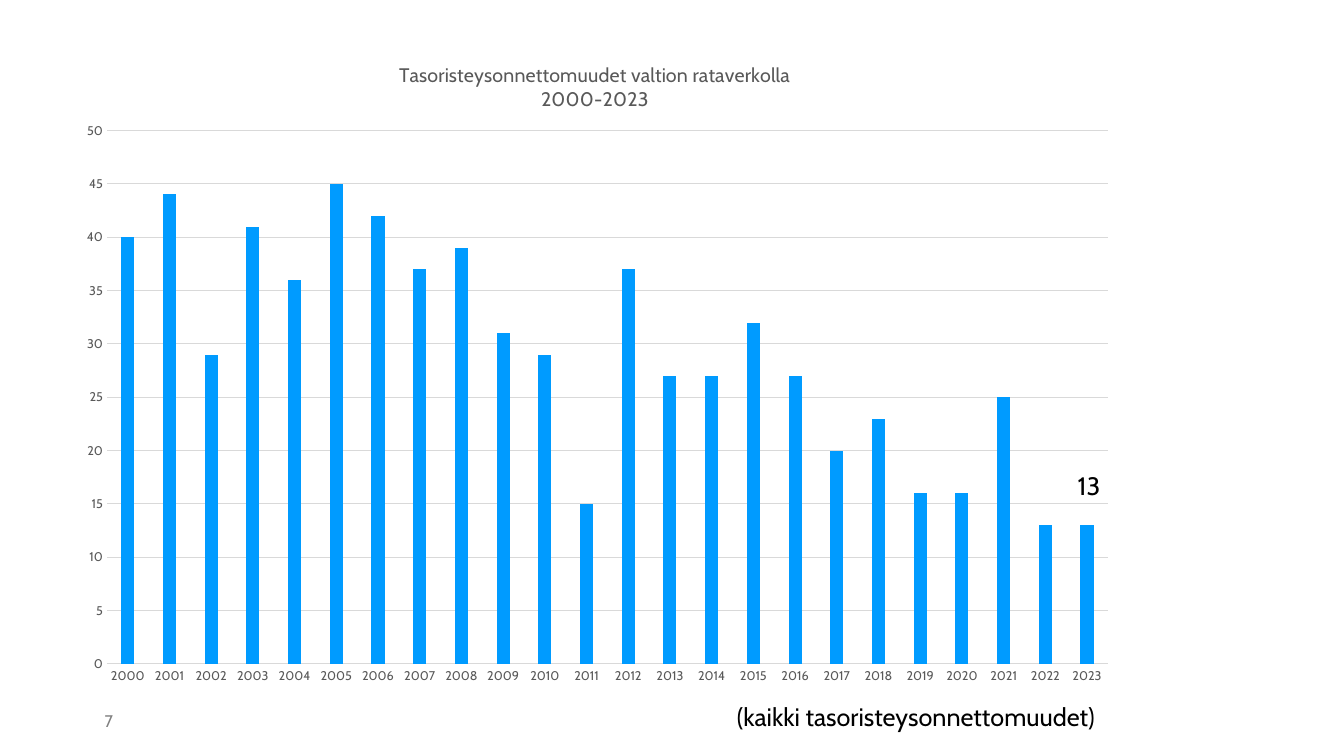
from dataclasses import dataclass

from lxml import etree
from pptx import Presentation
from pptx import util as u
from pptx.chart import data as chart_data
from pptx.dml.color import RGBColor
from pptx.enum import chart as chart_enum
from pptx.enum import text as text_enum
from pptx.oxml import ns


@dataclass(frozen=True)
class Theme:
    font: str = "Cabin"
    bar: str = "009BFF"
    grid: str = "D9D9D9"
    chart_text: str = "595959"
    page_number: str = "808080"
    ink: str = "000000"
    title_size: float = 14
    axis_size: float = 9
    page_size: float = 12
    note_size: float = 18
    line_width: float = 0.75


@dataclass(frozen=True)
class Label:
    text: str
    left: float
    top: float
    width: float
    height: float
    size: float
    color: str
    wrap: bool = False
    anchor: text_enum.MSO_ANCHOR = text_enum.MSO_ANCHOR.TOP


THEME = Theme()
FIRST_YEAR = 2000
ACCIDENTS = (40, 44, 29, 41, 36, 45, 42, 37, 39, 31, 29, 15,
             37, 27, 27, 32, 27, 20, 23, 16, 16, 25, 13, 13)
TITLE_LINES = ("Tasoristeysonnettomuudet valtion rataverkolla", "2000-2023")
PAGE_NUMBER = Label("7", 0.94, 6.95, 0.61, 0.4, THEME.page_size, THEME.page_number,
                    wrap=True, anchor=text_enum.MSO_ANCHOR.MIDDLE)
NOTES = (
    Label("(kaikki tasoristeysonnettomuudet)", 7.21, 6.91, 3.99, 0.4,
          THEME.note_size, THEME.ink),
    Label("13", 10.59, 4.62, 0.48, 0.4, THEME.note_size, THEME.ink),
)


def set_font(font, *, size: float, color: str) -> None:
    font.name = THEME.font
    font.size = u.Pt(size)
    font.bold = False
    font.color.rgb = RGBColor.from_string(color)


def write_text(paragraph, content: str, *, size: float, color: str) -> None:
    run = paragraph.add_run()
    run.text = content
    set_font(run.font, size=size, color=color)


def add_label(slide, label: Label) -> None:
    box = slide.shapes.add_textbox(u.Inches(label.left), u.Inches(label.top),
                                   u.Inches(label.width), u.Inches(label.height))
    frame = box.text_frame
    frame.word_wrap = label.wrap
    frame.vertical_anchor = label.anchor
    if not label.wrap:
        frame.auto_size = text_enum.MSO_AUTO_SIZE.SHAPE_TO_FIT_TEXT
    write_text(frame.paragraphs[0], label.text, size=label.size, color=label.color)


def set_layout(parent, index: int, **settings: str | float) -> None:
    for old in parent.findall(ns.qn("c:layout")):
        parent.remove(old)
    layout = etree.Element(ns.qn("c:layout"))
    manual = etree.SubElement(layout, ns.qn("c:manualLayout"))
    for name, value in settings.items():
        etree.SubElement(manual, ns.qn(f"c:{name}")).set("val", str(value))
    parent.insert(index, layout)


def style_line(line) -> None:
    line.color.rgb = RGBColor.from_string(THEME.grid)
    line.width = u.Pt(THEME.line_width)


def add_title(chart) -> None:
    chart.has_title = True
    frame = chart.chart_title.text_frame
    for index, line in enumerate(TITLE_LINES):
        paragraph = frame.add_paragraph() if index else frame.paragraphs[0]
        write_text(paragraph, line, size=THEME.title_size, color=THEME.chart_text)
    chart.chart_title.include_in_layout = False
    set_layout(chart.chart_title._element, 1, xMode="edge", yMode="edge", x=0.31, y=0.04)


def style_axes(chart) -> None:
    for axis in (chart.category_axis, chart.value_axis):
        axis.major_tick_mark = chart_enum.XL_TICK_MARK.NONE
        axis.minor_tick_mark = chart_enum.XL_TICK_MARK.NONE
        set_font(axis.tick_labels.font, size=THEME.axis_size, color=THEME.chart_text)
    style_line(chart.category_axis.format.line)
    values = chart.value_axis
    values.minimum_scale, values.maximum_scale, values.major_unit = 0, 50, 5
    values.format.line.fill.background()
    values.has_major_gridlines = True
    style_line(values.major_gridlines.format.line)


def add_accident_chart(slide) -> None:
    data = chart_data.CategoryChartData()
    data.categories = [str(FIRST_YEAR + offset) for offset in range(len(ACCIDENTS))]
    data.add_series("Series 1", ACCIDENTS)
    chart = slide.shapes.add_chart(
        chart_enum.XL_CHART_TYPE.COLUMN_CLUSTERED, u.Inches(0.66), u.Inches(0.32),
        u.Inches(10.54), u.Inches(6.59), data).chart
    set_font(chart.font, size=10, color=THEME.ink)
    chart.has_legend = False
    add_title(chart)
    style_axes(chart)
    plot = chart.plots[0]
    plot.gap_width, plot.overlap = 219, -27
    plot.vary_by_categories = False
    fill = plot.series[0].format.fill
    fill.solid()
    fill.fore_color.rgb = RGBColor.from_string(THEME.bar)
    plot_area = chart._chartSpace.find(f".//{ns.qn('c:plotArea')}")
    set_layout(plot_area, 0, layoutTarget="inner", xMode="edge", yMode="edge",
               x=0.038, y=0.148, w=0.942, h=0.803)


def main() -> None:
    presentation = Presentation()
    presentation.slide_width = u.Inches(13.33)
    presentation.slide_height = u.Inches(7.5)
    slide = presentation.slides.add_slide(presentation.slide_layouts[6])
    add_label(slide, PAGE_NUMBER)
    add_accident_chart(slide)
    for note in NOTES:
        add_label(slide, note)
    presentation.save("out.pptx")


if __name__ == "__main__":
    main()
